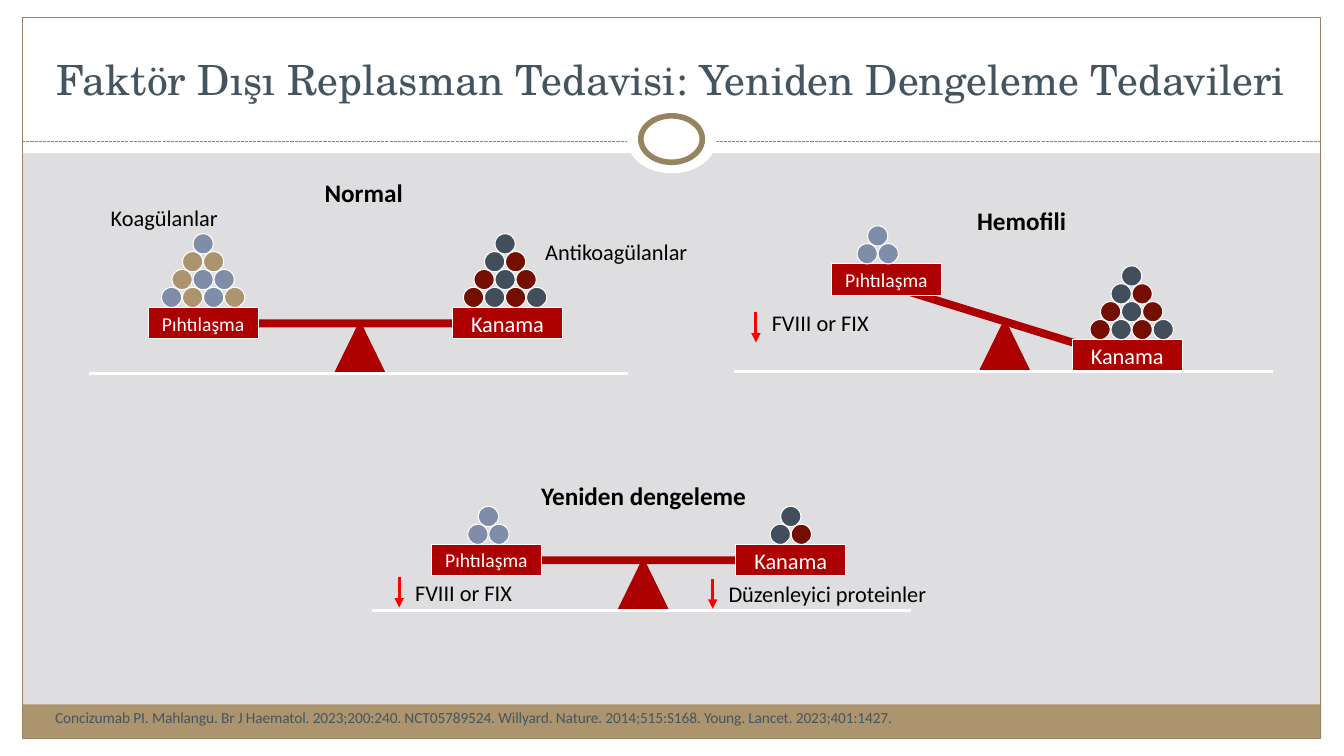
import pptx
import pptx.dml.color
import pptx.enum.dml
import pptx.enum.shapes
import pptx.enum.text
import pptx.oxml.ns
import pptx.util
from lxml import etree

Cm, Pt = pptx.util.Cm, pptx.util.Pt
RGB = pptx.dml.color.RGBColor.from_string
SHAPE = pptx.enum.shapes.MSO_SHAPE
ALIGN = pptx.enum.text.PP_ALIGN
ANCHOR = pptx.enum.text.MSO_ANCHOR
qn = pptx.oxml.ns.qn

COLORS = {
    "background": "DEDEE0", "white": "FFFFFF", "black": "000000",
    "tan": "AC956E", "bronze": "988361", "slate": "455560",
    "red": "AD0101", "arrow": "FF0000",
    "B": "808DA9", "T": "AC956E", "D": "424E5B", "R": "730E00",
}

prs = pptx.Presentation()
prs.slide_width, prs.slide_height = Cm(33.87), Cm(19.05)
s = prs.slides.add_slide(prs.slide_layouts[6])
s.background.fill.solid()
s.background.fill.fore_color.rgb = RGB(COLORS["background"])


def add_shape(kind, x, y, w, h, fill=None, line=None, width=0):
    sp = s.shapes.add_shape(kind, Cm(x), Cm(y), Cm(w), Cm(h))
    sp.shadow.inherit = False
    if fill:
        sp.fill.solid()
        sp.fill.fore_color.rgb = RGB(COLORS[fill])
    else:
        sp.fill.background()
    if line:
        sp.line.color.rgb = RGB(COLORS[line])
        sp.line.width = Pt(width)
    else:
        sp.line.fill.background()
    return sp


def write(sp, text, size, color, align=ALIGN.LEFT, anchor=ANCHOR.TOP, font="Calibri", bold=False):
    """Put one unwrapped line of text in a shape and return its run."""
    tf = sp.text_frame
    tf.word_wrap = False
    tf.vertical_anchor = anchor
    p = tf.paragraphs[0]
    p.text = text
    p.alignment = align
    r = p.runs[0]
    r.font.name, r.font.size, r.font.bold = font, Pt(size), bold
    r.font.color.rgb = RGB(COLORS[color])
    return r


# Page frame
for x, y, w, h, fill in [
    (0, 18.62, 33.87, 0.43, "white"),
    (0, 0, 33.87, 3.86, "white"),
    (0, 0, 0.56, 19.05, "white"),
    (33.3, 0, 0.57, 19.05, "white"),
    (0.56, 17.75, 32.72, 0.86, "tan"),
]:
    add_shape(SHAPE.RECTANGLE, x, y, w, h, fill)
add_shape(SHAPE.RECTANGLE, 0.56, 0.43, 32.72, 18.19, line="bronze", width=0.75)

# Scales: pivot x, ground y, beam angle, then the clotting and bleeding pans as
# (pan centre from pivot, pan top from ground, pile shift, rows of balls)
small_pile = ["B", "BB"]
bleeding_pile = ["D", "DR", "RDR", "RDRD"]
scales = [
    (9.07, 9.42, 0, (-3.95, -1.67, 0, ["B", "TT", "TBB", "BTBT"]),
     (3.72, -1.67, -0.06, bleeding_pile)),
    (25.32, 9.37, 17.2, (-2.98, -2.72, -0.22, small_pile),
     (3.09, -0.81, 0.11, bleeding_pile)),
    (16.21, 15.39, 0, (-3.95, -1.67, 0.05, small_pile),
     (3.72, -1.67, 0, bleeding_pile[:2])),
]
PAN_W, PAN_H = 2.77, 0.79
BALL, BALL_STEP, ROW_STEP = 0.51, 0.53, 0.45
lines = [(0.56, 3.56, 33.27, 3.56, "bronze", 0.75)]

for pivot, ground, angle, clotting, bleeding in scales:
    add_shape(SHAPE.ISOSCELES_TRIANGLE, pivot - 0.66, ground - 1.35, 1.32, 1.35, "red")
    beam = add_shape(SHAPE.RECTANGLE, pivot - 3.09, ground - 1.37, 6.17, 0.2, "red")
    beam.rotation = angle
    for (dx, dy, shift, rows), name, size in [(clotting, "Pıhtılaşma", 14), (bleeding, "Kanama", 16)]:
        center, top = pivot + dx, ground + dy
        pan = add_shape(SHAPE.RECTANGLE, center - PAN_W / 2, top, PAN_W, PAN_H, "red", "white")
        pan.text_frame.margin_top = pan.text_frame.margin_bottom = 0
        write(pan, name, size, "white", ALIGN.CENTER, ANCHOR.MIDDLE)
        for i, row in enumerate(rows):
            y = top - BALL - (len(rows) - 1 - i) * ROW_STEP
            for j, color in enumerate(row):
                x = center + shift + (j - (len(row) - 1) / 2) * BALL_STEP - BALL / 2
                add_shape(SHAPE.OVAL, x, y, BALL, BALL, color, "white")
    lines.append((pivot - 6.83, ground, pivot + 6.76, ground, "white", 2.25))

for x, y in [(19.05, 7.87), (10.06, 14.55), (17.96, 14.58)]:
    lines.append((x, y, x, y + 0.76, "arrow", 2.25))

# Title rule, ground lines and down arrows
for x1, y1, x2, y2, color, width in lines:
    cn = s.shapes.add_connector(pptx.enum.shapes.MSO_CONNECTOR.STRAIGHT, Cm(x1), Cm(y1), Cm(x2), Cm(y2))
    cn.line.color.rgb = RGB(COLORS[color])
    cn.line.width = Pt(width)
    if color == "bronze":
        cn.line.dash_style = pptx.enum.dml.MSO_LINE.SQUARE_DOT
        cn.line._ln.find(qn("a:prstDash")).set("val", "sysDash")
    if color == "arrow":
        etree.SubElement(cn.line._ln, qn("a:tailEnd"), type="triangle")
    etree.SubElement(cn._element.spPr, qn("a:effectLst"))

add_shape(SHAPE.OVAL, 15.8, 2.67, 2.26, 1.7, "white")
add_shape(SHAPE.OVAL, 16.15, 2.92, 1.55, 1.17, "white", "bronze", 4)

# Headings and labels
for text, x, y, w, heading in [
    ("Normal", 7.92, 4.34, 2.49, True),
    ("Hemofili", 24.36, 5.05, 2.77, True),
    ("Yeniden dengeleme", 13.36, 11.99, 5.72, True),
    ("Koagülanlar", 2.54, 5.03, 3.25, False),
    ("Antikoagülanlar", 13.49, 5.87, 4.14, False),
    ("FVIII or FIX", 19.2, 7.67, 3, False),
    ("FVIII or FIX", 10.21, 14.48, 3, False),
    ("Düzenleyici proteinler", 18.11, 14.5, 5.56, False),
]:
    tb = s.shapes.add_textbox(Cm(x), Cm(y), Cm(w), Cm(1.02 if heading else 0.94))
    write(tb, text, 18 if heading else 16, "black",
          ALIGN.CENTER if heading else ALIGN.LEFT, bold=heading)

title = s.shapes.add_textbox(Cm(1.12), Cm(0.64), Cm(31.6), Cm(2.11))
write(title, "Faktör Dışı Replasman Tedavisi: Yeniden Dengeleme Tedavileri", 29.7, "slate",
      ALIGN.CENTER, ANCHOR.BOTTOM, "TeX Gyre Schola")

citation = s.shapes.add_textbox(Cm(1.14), Cm(17.7), Cm(21.82), Cm(0.74))
r = write(citation, "Concizumab PI. Mahlangu. Br J Haematol. 2023;200:240. NCT05789524. "
          "Willyard. Nature. 2014;515:S168. Young. Lancet. 2023;401:1427.",
          11, "slate", anchor=ANCHOR.BOTTOM)
r._r.get_or_add_rPr().set("spc", "-10")

prs.save("out.pptx")
